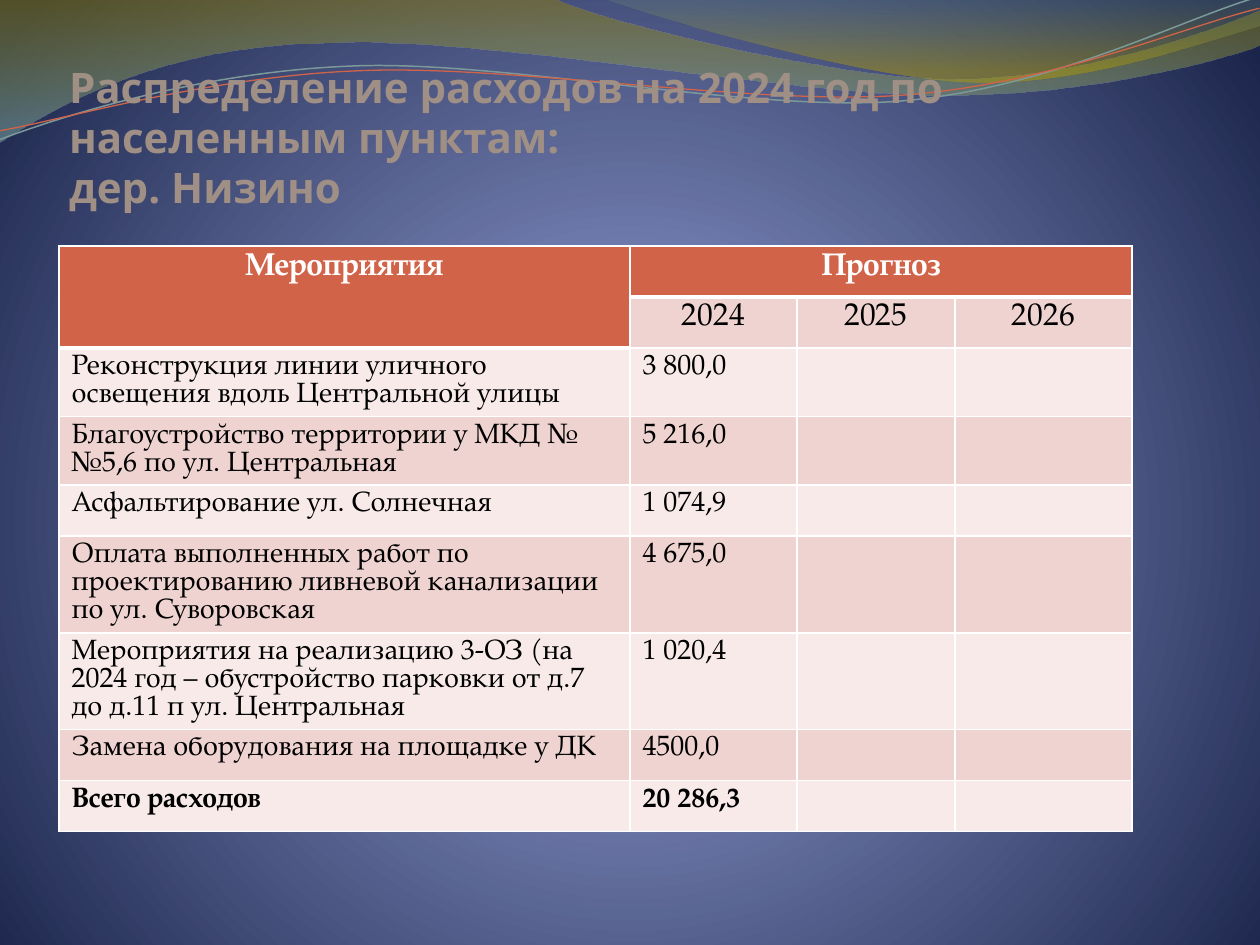
from dataclasses import dataclass
from math import cos, radians, sin

from lxml.etree import SubElement
from pptx import Presentation
from pptx.dml.color import RGBColor
from pptx.enum.text import MSO_ANCHOR, MSO_AUTO_SIZE, PP_ALIGN
from pptx.oxml.ns import qn
from pptx.util import Pt

EMU_PER_PX = 914400 / 126


def px(value):
    return round(value * EMU_PER_PX)


@dataclass(frozen=True)
class Theme:
    title_font: str = "Noto Sans"
    table_font: str = "TeX Gyre Pagella"
    title_size: float = 24
    title_leading: float = 28.6
    head_size: float = 18
    body_size: float = 16
    title: str = "9F8F85"
    accent: str = "D16349"
    teal: str = "7C999A"
    band_dark: str = "EED3D0"
    band_light: str = "F7EAE9"
    white: str = "FFFFFF"
    black: str = "000000"
    backdrop: tuple = ((0, "7A88C3", 100), (25, "7A86B9", 100), (100, "1B254B", 100))
    wide_wave: tuple = ((0, "978500", 45), (100, "77A5A6", 55))
    right_wave: tuple = ((0, "648484", 30), (80, "B49F00", 45))


def add_gradient(parent, stops):
    gradient = SubElement(parent, qn("a:gradFill"), rotWithShape="1")
    stop_list = SubElement(gradient, qn("a:gsLst"))
    for position, color, opacity in stops:
        stop = SubElement(stop_list, qn("a:gs"), pos=str(position * 1000))
        fill = SubElement(stop, qn("a:srgbClr"), val=color)
        if opacity < 100:
            SubElement(fill, qn("a:alpha"), val=str(opacity * 1000))
    return gradient


def turn(numbers, degrees, center):
    angle = radians(degrees)
    turned = []
    for x, y in zip(numbers[::2], numbers[1::2]):
        across, down = x - center[0], y - center[1]
        turned += [center[0] + across * cos(angle) - down * sin(angle),
                   center[1] + across * sin(angle) + down * cos(angle)]
    return tuple(turned)


class SlideBuilder:
    def __init__(self, page, theme):
        self.page = page
        self.theme = theme

    def background(self):
        self.page.background.fill.solid()
        properties = self.page.background._cSld.find(qn("p:bg")).find(qn("p:bgPr"))
        properties.remove(properties.find(qn("a:solidFill")))
        gradient = add_gradient(properties, self.theme.backdrop)
        properties.insert(0, gradient)
        circle = SubElement(gradient, qn("a:path"), path="circle")
        SubElement(circle, qn("a:fillToRect"), l="10000", t="110000", r="10000", b="100000")

    def outline(self, start, segments, closed):
        points = [pair for segment in segments for pair in zip(segment[::2], segment[1::2])]
        builder = self.page.shapes.build_freeform(*start, scale=EMU_PER_PX)
        builder.add_line_segments(points, close=closed)
        shape = builder.convert_to_shape()
        shape.shadow.inherit = False
        contour = shape._element.find(".//" + qn("a:path"))
        lines = iter(contour.findall(qn("a:lnTo")))
        for segment in segments:
            steps = [next(lines) for _ in range(len(segment) // 2)]
            if len(steps) == 3:
                bezier = SubElement(contour, qn("a:cubicBezTo"))
                contour.replace(steps[0], bezier)
                for step in steps:
                    bezier.append(step[0])
                for step in steps[1:]:
                    contour.remove(step)
        return shape

    def wave(self, start, segments, stops):
        shape = self.outline(start, segments, True)
        shape.line.fill.background()
        properties = shape._element.spPr
        gradient = add_gradient(properties, stops)
        SubElement(gradient, qn("a:lin"), ang="5400000", scaled="1")
        properties.insert(2, gradient)

    def curve(self, start, segments, color, width, center, tilt=357.3):
        level = [turn(segment, -tilt, center) for segment in segments]
        shape = self.outline(turn(start, -tilt, center), level, False)
        shape.rotation = tilt
        shape.fill.background()
        shape.line.color.rgb = RGBColor.from_string(color)
        shape.line.width = Pt(width)

    def style(self, para, font, size, color, bold, leading):
        para.font.name = font
        para.font.size = Pt(size)
        para.font.bold = bold
        para.font.color.rgb = RGBColor.from_string(color)
        para.line_spacing = Pt(leading)

    def title(self, lines, left, top, width, height):
        theme = self.theme
        box = self.page.shapes.title
        box.left, box.top, box.width, box.height = map(px, (left, top, width, height))
        frame = box.text_frame
        frame.word_wrap = True
        frame.auto_size = MSO_AUTO_SIZE.NONE
        frame.vertical_anchor = MSO_ANCHOR.BOTTOM
        frame.margin_left = frame.margin_right = frame.margin_top = frame.margin_bottom = 0
        para = frame.paragraphs[0]
        para.alignment = PP_ALIGN.LEFT
        for index, line in enumerate(lines):
            if index:
                para.add_line_break()
            para.add_run().text = line
        self.style(para, theme.title_font, theme.title_size, theme.title, True, theme.title_leading)
        self.page.shapes._spTree.append(box._element)

    def cell(self, cell, text, fill, size, color, bold, align, bottom=1):
        cell.fill.solid()
        cell.fill.fore_color.rgb = RGBColor.from_string(fill)
        para = cell.text_frame.paragraphs[0]
        para.alignment = align
        if text:
            para.add_run().text = text
        self.style(para, self.theme.table_font, size, color, bold, size)
        properties = cell._tc.get_or_add_tcPr()
        for index, (side, width) in enumerate(zip("LRTB", (1, 1, 1, bottom))):
            border = SubElement(properties, qn(f"a:ln{side}"), w=str(Pt(width)))
            SubElement(SubElement(border, qn("a:solidFill")), qn("a:srgbClr"), val=self.theme.white)
            properties.insert(index, border)

    def table(self, left, top, height, columns, row_height, heading, years, items):
        theme = self.theme
        holder = self.page.shapes.add_table(
            len(items) + 2, len(columns), px(left), px(top), px(sum(columns)), px(height))
        table = holder.table
        table.first_row = table.horz_banding = False
        for column, width in zip(table.columns, columns):
            column.width = px(width)
        for row in table.rows:
            row.height = px(row_height)
        holder.height = px(height)
        table.cell(0, 0).merge(table.cell(1, 0))
        table.cell(0, 1).merge(table.cell(0, 3))
        for column, text in enumerate((*heading, "", "")):
            self.cell(table.cell(0, column), text, theme.accent, theme.head_size,
                      theme.white, True, PP_ALIGN.CENTER, 3)
        for column, text in enumerate(("", *years)):
            fill = theme.band_dark if column else theme.accent
            self.cell(table.cell(1, column), text, fill, theme.head_size,
                      theme.black, False, PP_ALIGN.CENTER, 1 if column else 3)
        for index, item in enumerate(items):
            fill = theme.band_dark if index % 2 else theme.band_light
            for column, text in enumerate((*item, "", "")):
                self.cell(table.cell(index + 2, column), text, fill, theme.body_size,
                          theme.black, index == len(items) - 1, PP_ALIGN.LEFT)


def main():
    deck = Presentation()
    deck.slide_width, deck.slide_height = px(1260), px(945)
    theme = Theme()
    slide = SlideBuilder(deck.slides.add_slide(deck.slide_layouts[5]), theme)
    slide.background()

    slide.wave((0, 0), [
        (554, -1), (600, 21, 837, 79, 955, 79), (1075, 79, 1207, 33, 1260, 11),
        (1261, 45), (1239, 55, 1096, 96, 940, 95), (784, 95, 481, 35, 324, 43),
        (163, 45, 58, 105, -1, 142),
    ], theme.wide_wave)
    slide.wave((604, -1), [
        (641, 14, 859, 78, 969, 82), (1079, 87, 1211, 40, 1260, 26), (1260, 0),
    ], theme.right_wave)
    slide.curve((0, 140), [
        (60, 117, 199, 72, 349, 66), (498, 59, 747, 112, 898, 101),
        (1050, 89, 1182, 19, 1257, -3),
    ], theme.teal, 0.85, (629, 72))
    slide.curve((0, 131), [
        (59, 121, 207, 77, 357, 71), (508, 64, 752, 106, 903, 95),
        (1053, 84, 1186, 26, 1260, 8),
    ], theme.accent, 0.75, (629, 74))

    slide.title(("Распределение расходов на 2024 год по населенным пунктам:", "дер. Низино"),
                69, 158, 1071, 54)
    slide.table(
        59, 246, 641, (571, 167, 158, 177), 51,
        ("Мероприятия", "Прогноз"), ("2024", "2025", "2026"),
        (
            ("Реконструкция линии уличного освещения вдоль Центральной улицы", "3 800,0"),
            ("Благоустройство территории у МКД №№5,6 по ул. Центральная", "5 216,0"),
            ("Асфальтирование ул. Солнечная", "1 074,9"),
            ("Оплата выполненных работ по проектированию ливневой канализации по ул. Суворовская",
             "4 675,0"),
            ("Мероприятия на реализацию 3-ОЗ (на 2024 год – обустройство парковки от д.7 "
             "до д.11 п ул. Центральная", "1 020,4"),
            ("Замена оборудования на площадке у ДК", "4500,0"),
            ("Всего расходов", "20 286,3"),
        ),
    )
    deck.save("out.pptx")


if __name__ == "__main__":
    main()
